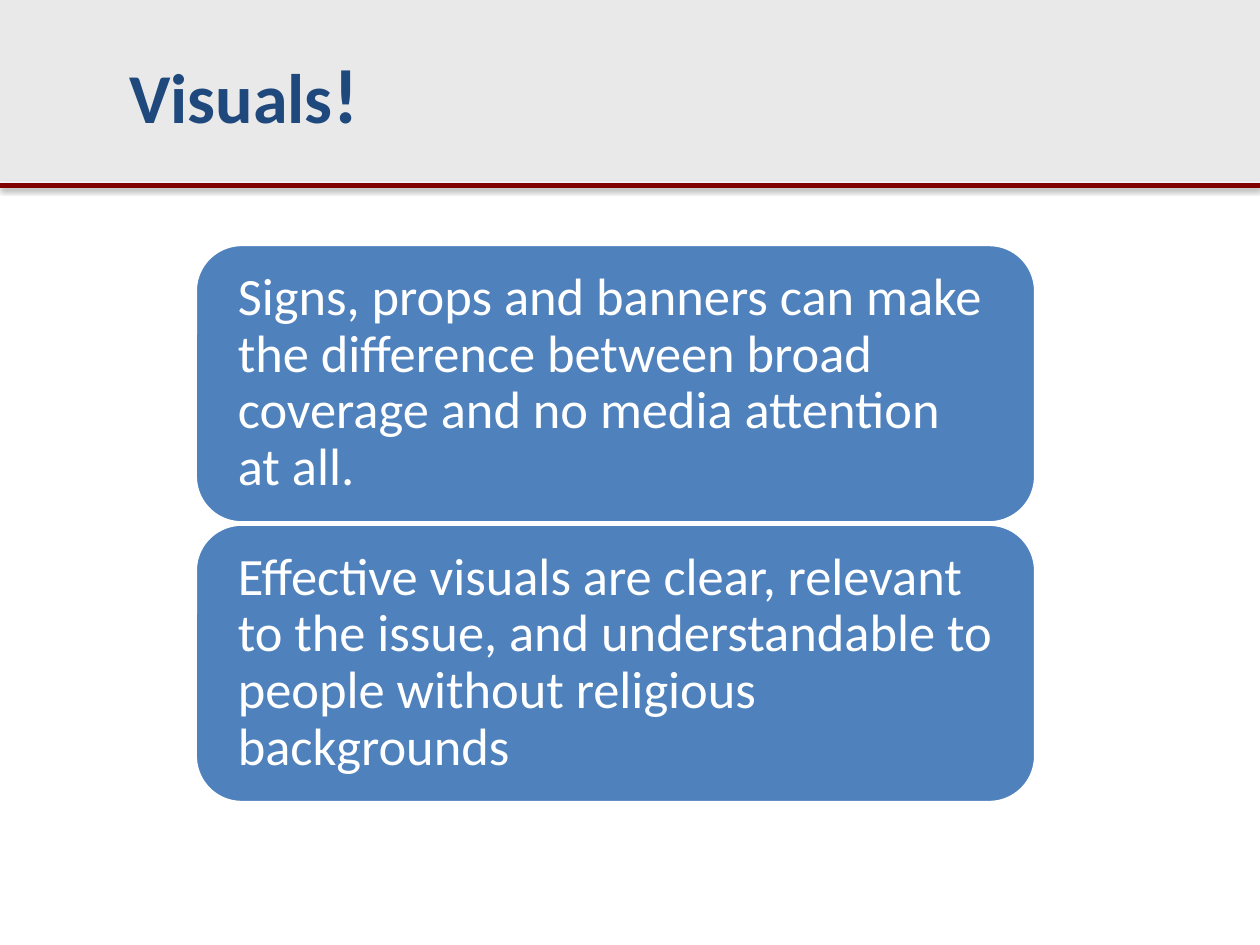
"""Build the Visuals! slide: a header band with a rule above two stacked message cards."""
from dataclasses import dataclass

from lxml import etree
from pptx import Presentation
from pptx import util as u
from pptx.dml.color import RGBColor
from pptx.enum import shapes, text
from pptx.oxml.ns import qn


@dataclass(frozen=True)
class Theme:
    """Colours, font and type sizes of the slide."""
    band: RGBColor = RGBColor(0xE9, 0xE9, 0xE9)
    rule: RGBColor = RGBColor(0x80, 0x00, 0x00)
    card: RGBColor = RGBColor(0x4F, 0x81, 0xBD)
    title: RGBColor = RGBColor(0x1F, 0x49, 0x7D)
    white: RGBColor = RGBColor(0xFF, 0xFF, 0xFF)
    font: str = "Calibri"
    body_size: int = 30
    title_size: int = 40
    mark_size: int = 44


@dataclass(frozen=True)
class Column:
    """A column of equal cards, in inches."""
    left: float = 1.55
    top: float = 1.94
    width: float = 6.67
    height: float = 2.21
    pitch: float = 2.22
    inset: float = 0.23


@dataclass(frozen=True)
class Card:
    """One message and its row in the column."""
    row: int
    message: str


THEME = Theme()
COLUMN = Column()
CARDS = (
    Card(0, "Signs, props and banners can make the difference between broad "
            "coverage and no media attention at all."),
    Card(1, "Effective visuals are clear, relevant to the issue, and "
            "understandable to people without religious backgrounds"),
)


def add_run(p, words: str, size: int, color: RGBColor, bold: bool = False) -> None:
    """Append one styled run to a paragraph."""
    r = p.add_run()
    r.text = words
    r.font.name, r.font.size, r.font.bold = THEME.font, u.Pt(size), bold
    r.font.color.rgb = color


def add_header(slide, width: int) -> None:
    """Draw the full-width band and the shadowed rule below it."""
    sp = slide.shapes.add_shape(shapes.MSO_SHAPE.RECTANGLE, 0, 0, width, u.Inches(1.44))
    sp.shadow.inherit = False
    sp.fill.solid()
    sp.fill.fore_color.rgb = THEME.band
    sp.line.fill.background()

    y = u.Inches(1.47)
    rule = slide.shapes.add_connector(shapes.MSO_CONNECTOR.STRAIGHT, 0, y, width, y)
    rule.line.color.rgb, rule.line.width = THEME.rule, u.Pt(3)
    effects = etree.SubElement(rule._element.spPr, qn("a:effectLst"))
    shadow = etree.SubElement(effects, qn("a:outerShdw"), blurRad=str(u.Pt(3.1)),
                              dist=str(u.Pt(1.6)), dir="5400000", rotWithShape="0")
    color = etree.SubElement(shadow, qn("a:srgbClr"), val="000000")
    etree.SubElement(color, qn("a:alpha"), val="38000")


def add_title(slide) -> None:
    """Write the title with its larger exclamation mark."""
    box = slide.shapes.add_textbox(u.Inches(0.93), u.Inches(0.32), u.Inches(4.3), u.Inches(0.84))
    tf = box.text_frame
    tf.word_wrap = True
    tf.auto_size = text.MSO_AUTO_SIZE.SHAPE_TO_FIT_TEXT
    p = tf.paragraphs[0]
    add_run(p, "Visuals", THEME.title_size, THEME.title, bold=True)
    add_run(p, "!", THEME.mark_size, THEME.title, bold=True)


def add_card(slide, card: Card) -> None:
    """Draw one rounded card holding its message."""
    top = COLUMN.top + card.row * COLUMN.pitch
    sp = slide.shapes.add_shape(shapes.MSO_SHAPE.ROUNDED_RECTANGLE, u.Inches(COLUMN.left),
                                u.Inches(top), u.Inches(COLUMN.width), u.Inches(COLUMN.height))
    sp.shadow.inherit = False
    sp.fill.solid()
    sp.fill.fore_color.rgb = THEME.card
    sp.line.color.rgb, sp.line.width = THEME.white, u.Pt(2)
    tf = sp.text_frame
    tf.word_wrap = True
    tf.vertical_anchor = text.MSO_ANCHOR.MIDDLE
    tf.margin_left = tf.margin_right = u.Inches(COLUMN.inset)
    tf.margin_top = tf.margin_bottom = 0
    p = tf.paragraphs[0]
    p.alignment, p.line_spacing = text.PP_ALIGN.LEFT, 0.9
    add_run(p, card.message, THEME.body_size, THEME.white)


def main() -> None:
    """Assemble and save the slide."""
    prs = Presentation()
    prs.slide_width, prs.slide_height = u.Inches(10), u.Inches(7.5)
    slide = prs.slides.add_slide(prs.slide_layouts[6])
    add_header(slide, prs.slide_width)
    for card in CARDS:
        add_card(slide, card)
    add_title(slide)
    prs.save("out.pptx")


if __name__ == "__main__":
    main()
